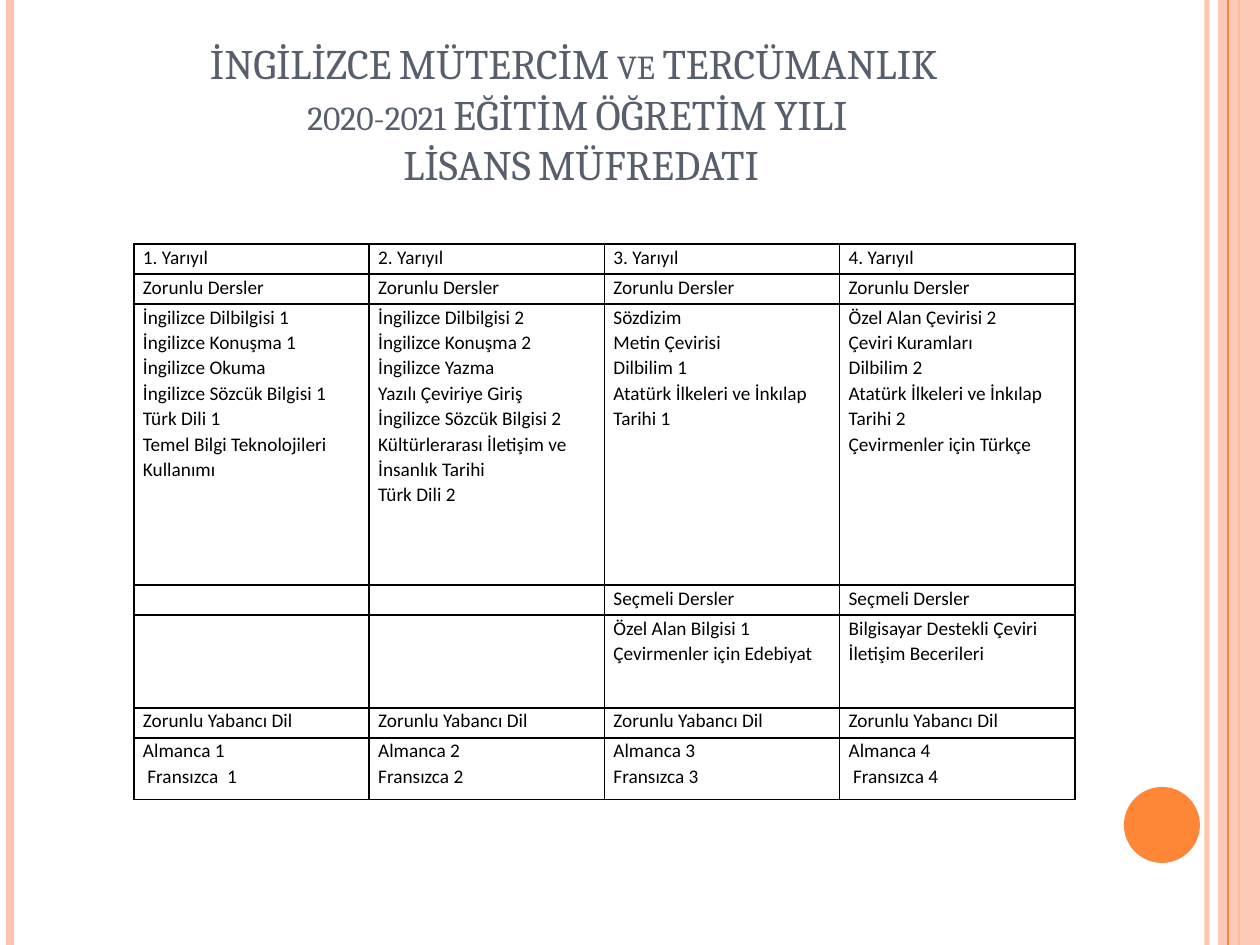
from lxml.etree import SubElement
from pptx import Presentation
from pptx.dml.color import RGBColor
from pptx.enum.shapes import MSO_CONNECTOR as Connector, MSO_SHAPE as Shape
from pptx.enum.text import MSO_ANCHOR as Anchor, PP_ALIGN as Align
from pptx.oxml.ns import qn
from pptx.util import Emu, Pt

COLORS = {"peach": "FEC3AE", "orange": "FE8637", "title": "575F6D", "ink": "000000"}
PAGE = (0, 0, 1260, 945)

TITLE = ("İNGİLİZCE MÜTERCİM ve TERCÜMANLIK \v"
         "2020-2021 EĞİTİM ÖĞRETİM YILI\v LİSANS MÜFREDATI")

# Row height in px, then one text per term
CURRICULUM = [
    (30, [f"{term}. Yarıyıl" for term in range(1, 5)]),
    (30, ["Zorunlu Dersler"] * 4),
    (281, [
        "İngilizce Dilbilgisi 1\nİngilizce Konuşma 1\nİngilizce Okuma\n"
        "İngilizce Sözcük Bilgisi 1\nTürk Dili 1\nTemel Bilgi Teknolojileri Kullanımı",
        "İngilizce Dilbilgisi 2\nİngilizce Konuşma 2\nİngilizce Yazma\n"
        "Yazılı Çeviriye Giriş\nİngilizce Sözcük Bilgisi 2\n"
        "Kültürlerarası İletişim ve İnsanlık Tarihi\nTürk Dili 2",
        "Sözdizim\nMetin Çevirisi\nDilbilim 1\nAtatürk İlkeleri ve İnkılap Tarihi 1",
        "Özel Alan Çevirisi 2\nÇeviri Kuramları\nDilbilim 2\n"
        "Atatürk İlkeleri ve İnkılap Tarihi 2\nÇevirmenler için Türkçe",
    ]),
    (30, ["", "", "Seçmeli Dersler", "Seçmeli Dersler"]),
    (93, ["", "", "Özel Alan Bilgisi 1\nÇevirmenler için Edebiyat",
          "Bilgisayar Destekli Çeviri\nİletişim Becerileri"]),
    (30, ["Zorunlu Yabancı Dil"] * 4),
    (62, ["Almanca 1\n Fransızca  1", "Almanca 2\nFransızca 2",
          "Almanca 3\nFransızca 3", "Almanca 4\n Fransızca 4"]),
]


def px(length):
    return Emu(round(length * 914400 / 126))


def color(name):
    return RGBColor.from_string(COLORS[name])


def set_alpha(properties, percent):
    for value in properties.iter(qn("a:srgbClr")):
        SubElement(value, qn("a:alpha"), val=str(percent * 1000))


def add_stripe(page, box, x, name, width, alpha=100):
    left, top, _, height = box
    stripe = page.shapes.add_connector(
        Connector.STRAIGHT, px(left + x), px(top), px(left + x), px(top + height))
    stripe.line.color.rgb = color(name)
    stripe.line.width = Pt(width)
    properties = stripe._element.spPr
    if alpha < 100:
        set_alpha(properties, alpha)
    SubElement(properties, qn("a:effectLst"))


def add_solid(page, kind, box, name):
    solid = page.shapes.add_shape(kind, *map(px, box))
    solid.shadow.inherit = False
    solid.fill.solid()
    solid.fill.fore_color.rgb = color(name)
    solid.line.fill.background()
    return solid


def add_frame(page, box):
    left, top, width, height = box
    add_stripe(page, box, 1207, "peach", 3, 93)
    add_stripe(page, box, 10, "peach", 4.5)
    add_stripe(page, box, 1239, "orange", 1.5)
    band = add_solid(page, Shape.RECTANGLE, (left + width - 42, top, 42, height), "peach")
    set_alpha(band._element.spPr, 87)
    add_stripe(page, box, 1228, "orange", 0.75)
    add_solid(page, Shape.OVAL, (left + 1124, top + 787, 76, 76), "orange")


def add_title(page, box):
    frame = page.shapes.add_textbox(*map(px, box)).text_frame
    frame.word_wrap = True
    frame.vertical_anchor = Anchor.BOTTOM
    frame.text = TITLE
    para = frame.paragraphs[0]
    para.alignment = Align.CENTER
    for span in para.runs:
        span.font.name = "Cambria"
        span.font.size = Pt(24)
        span.font.color.rgb = color("title")
        span._r.get_or_add_rPr().set("cap", "small")


def add_borders(cell):
    properties = cell._tc.get_or_add_tcPr()
    for side in ("a:lnL", "a:lnR", "a:lnT", "a:lnB"):
        line = SubElement(properties, qn(side), w=str(Pt(1)))
        fill = SubElement(line, qn("a:solidFill"))
        SubElement(fill, qn("a:srgbClr"), val=COLORS["ink"])


def fill_cell(cell, text):
    cell.margin_left = cell.margin_right = px(9)
    cell.margin_top = cell.margin_bottom = 0
    add_borders(cell)
    cell.fill.background()
    cell.text_frame.text = text
    for para in cell.text_frame.paragraphs:
        para.line_spacing = 1.07
        for span in para.runs:
            span.font.name = "Calibri"
            span.font.size = Pt(11)
            span.font.color.rgb = color("ink")
        if not para.runs:  # keeps empty rows low
            SubElement(para._p, qn("a:endParaRPr"), sz="1100")


def add_curriculum(page, box):
    left, top, width, height = box
    columns = len(CURRICULUM[0][1])
    table = page.shapes.add_table(
        len(CURRICULUM), columns, px(left), px(top), px(width), px(height)).table
    table.first_row = table.horz_banding = False
    for column in table.columns:
        column.width = px(width / columns)
    for row, (row_height, texts) in zip(table.rows, CURRICULUM):
        row.height = px(row_height)
        for cell, text in zip(row.cells, texts):
            fill_cell(cell, text)


def main():
    deck = Presentation()
    deck.slide_width, deck.slide_height = map(px, PAGE[2:])
    page = deck.slides.add_slide(deck.slide_layouts[6])
    add_frame(page, PAGE)
    add_title(page, (63, 38, 1029, 157))
    add_curriculum(page, (134, 244, 941, 556))
    deck.save("out.pptx")


if __name__ == "__main__":
    main()
